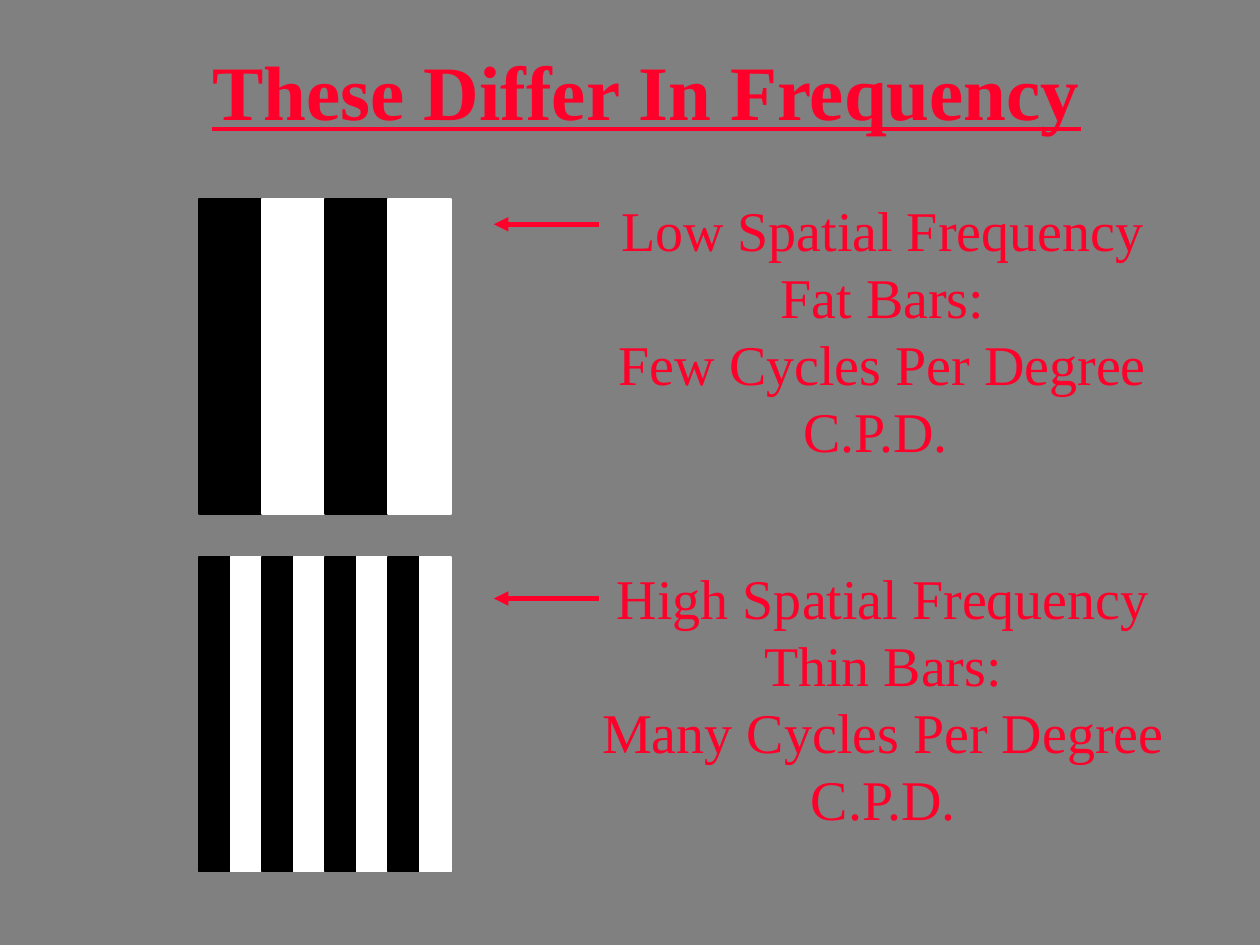
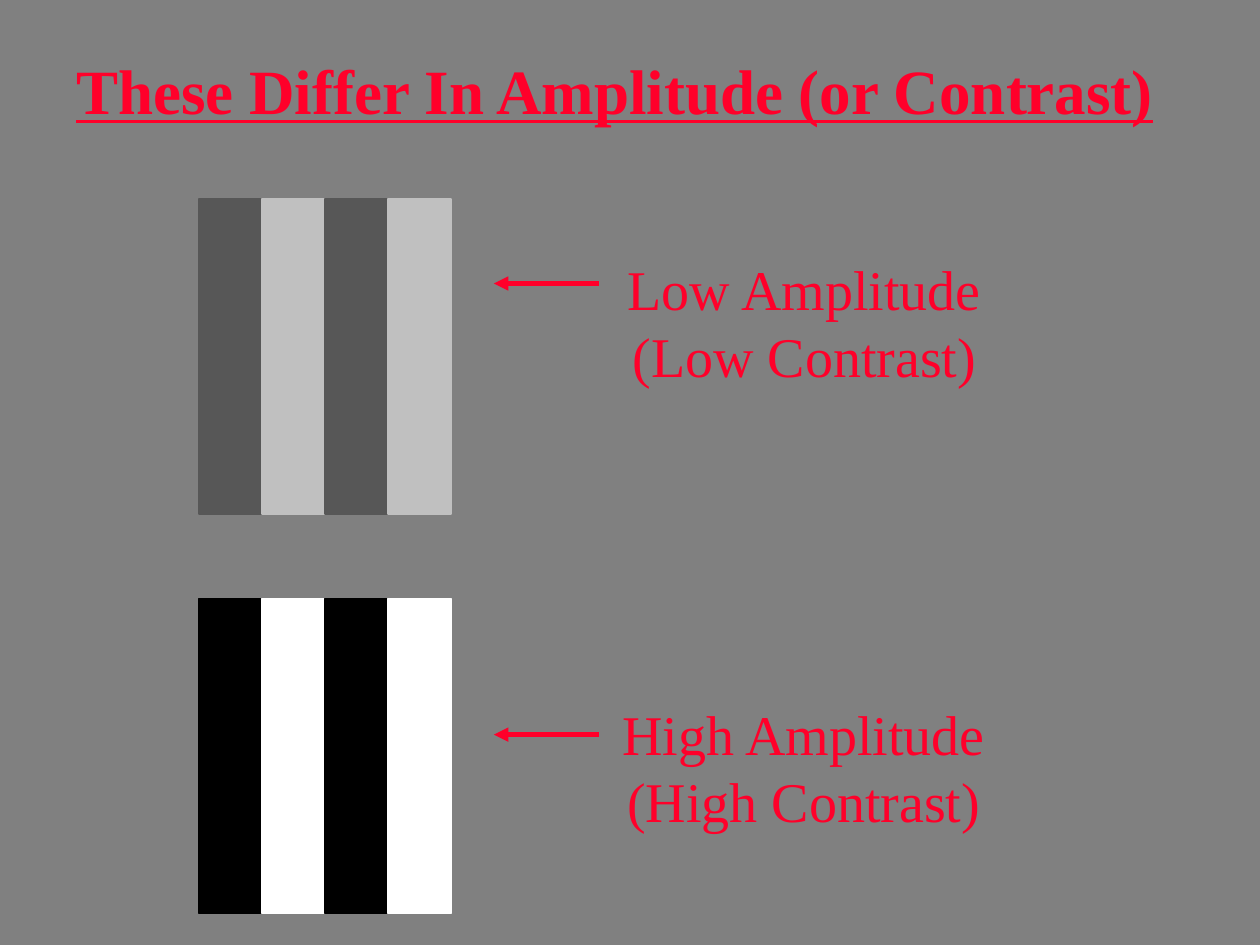
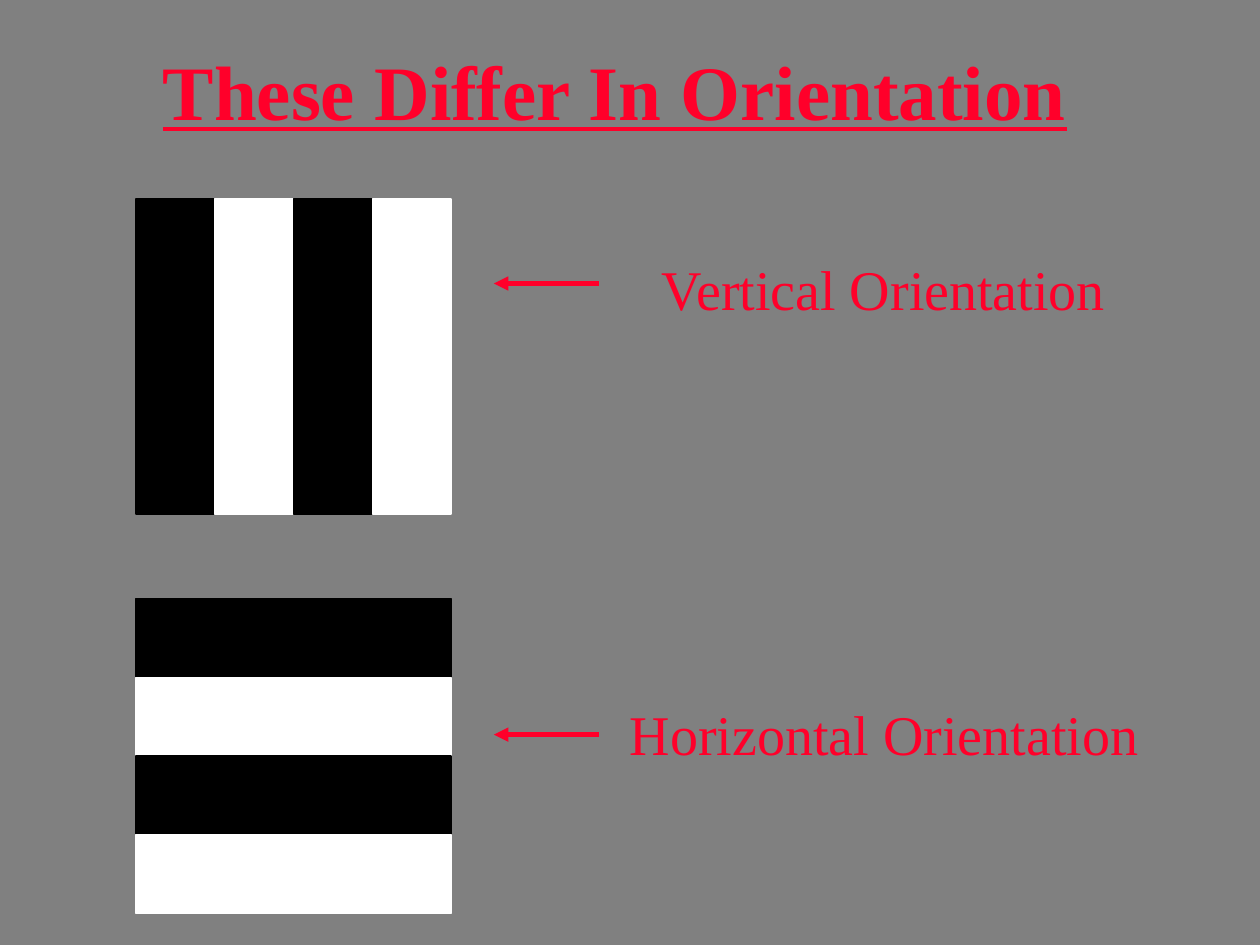
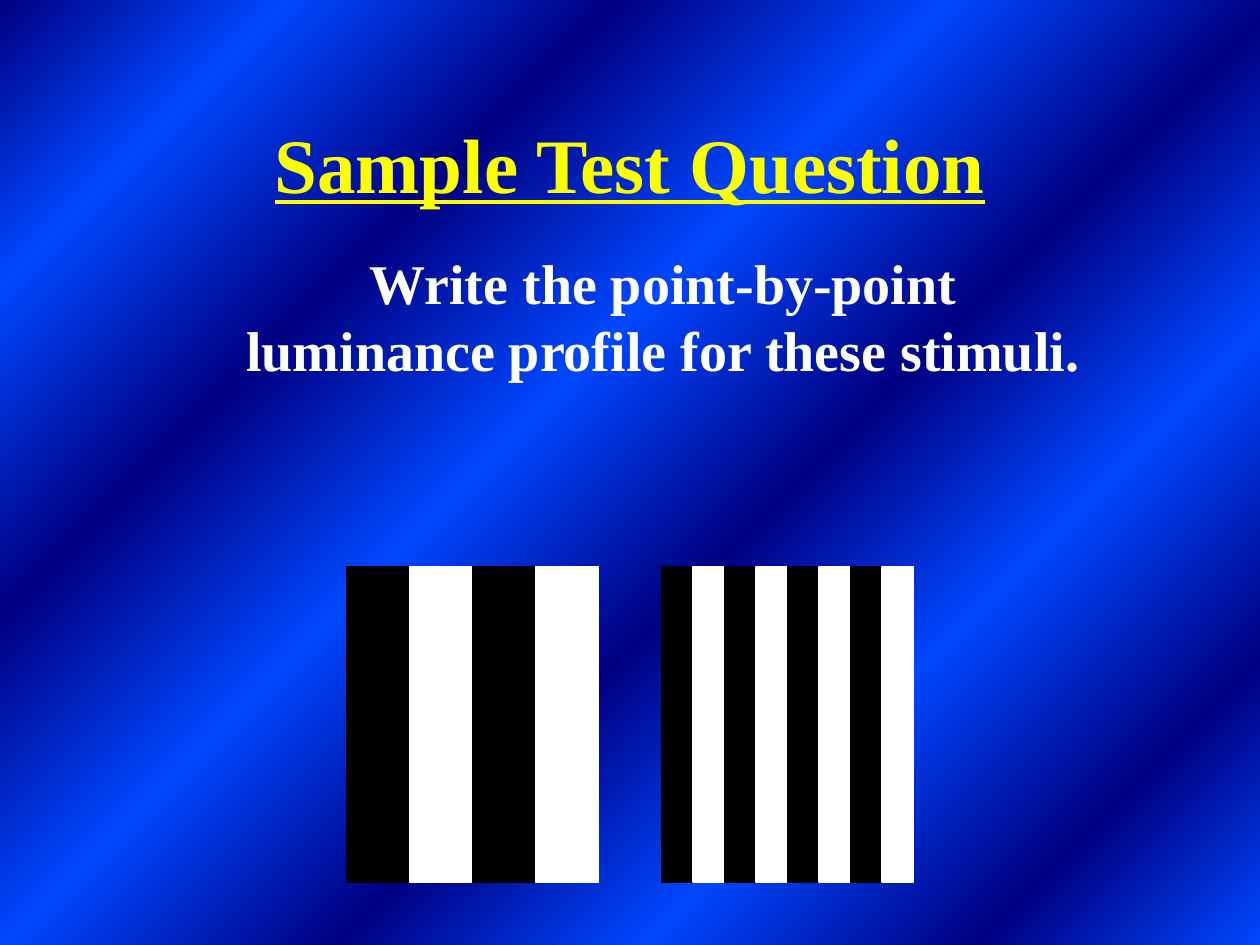
"""Build four slides on gratings that differ in frequency, amplitude and orientation."""
from lxml import etree
from pptx import Presentation
from pptx import util as u
from pptx.dml.color import RGBColor
from pptx.enum import shapes, text
from pptx.oxml import ns

GRAY = RGBColor(0x80, 0x80, 0x80)
RED = RGBColor(0xFF, 0x00, 0x2A)
YELLOW = RGBColor(0xFB, 0xFF, 0x00)
BLACK = RGBColor(0x00, 0x00, 0x00)
WHITE = RGBColor(0xFF, 0xFF, 0xFF)
DARK_GRAY = RGBColor(0x57, 0x57, 0x57)
LIGHT_GRAY = RGBColor(0xC0, 0xC0, 0xC0)
NAVY = RGBColor(0x00, 0x00, 0x82)
BLUE = RGBColor(0x00, 0x47, 0xFF)

STRONG = (BLACK, WHITE)
FAINT = (DARK_GRAY, LIGHT_GRAY)
GRADIENT_STOPS = (0, 13, 28, 43, 58, 72, 87, 100)
BAR_LENGTH = 2.5
ARROW_START, ARROW_END = 4.75, 3.92


def write_text(frame, content, frame_format, font_format):
    """Fill a text frame with centred, formatted paragraphs."""
    frame.text = content
    for name, value in frame_format.items():
        setattr(frame, name, value)
    for paragraph in frame.paragraphs:
        paragraph.alignment = text.PP_ALIGN.CENTER
        for run in paragraph.runs:
            run.font.color.rgb = font_format["color"]
            for name in ("size", "bold", "underline"):
                setattr(run.font, name, font_format[name])
            run.font.name = "Times New Roman"


def add_grating(slide, left, top, bar_width, bar_count, tones, horizontal=False):
    """Add a group of adjoining bars in alternating tones."""
    bars = slide.shapes.add_group_shape().shapes
    for index in range(bar_count):
        offset = index * bar_width
        box = ((left, top + offset, BAR_LENGTH, bar_width) if horizontal
               else (left + offset, top, bar_width, BAR_LENGTH))
        bar = bars.add_shape(shapes.MSO_SHAPE.RECTANGLE, *map(u.Inches, box))
        bar.shadow.inherit = False
        bar.fill.solid()
        bar.fill.fore_color.rgb = bar.line.color.rgb = tones[index % 2]
        bar.line.width = u.Pt(0.75)


TITLE_FRAME = {"vertical_anchor": text.MSO_ANCHOR.MIDDLE, "word_wrap": True,
               "auto_size": text.MSO_AUTO_SIZE.NONE}
LABEL_FRAME = {"word_wrap": False, "auto_size": text.MSO_AUTO_SIZE.SHAPE_TO_FIT_TEXT}

lessons = [
    {"title": "These Differ In Frequency", "title_box": (0.67, 0.17, 8.92, 1.08),
     "gratings": [(1.58, 1.58, 0.5, 4, STRONG), (1.58, 4.42, 0.25, 8, STRONG)],
     "labels": [
         ("Low Spatial Frequency\nFat Bars:\nFew Cycles Per Degree\nC.P.D. ",
          (4.81, 1.5, 4.39, 2.23)),
         ("High Spatial Frequency\nThin Bars:\nMany Cycles Per Degree\nC.P.D.",
          (4.68, 4.42, 4.66, 2.23))],
     "arrows": (1.78, 4.75)},
    {"title": "These Differ In Amplitude (or Contrast)", "title_size": 36,
     "title_box": (0.42, 0.17, 8.92, 1.08),
     "gratings": [(1.58, 1.58, 0.5, 4, FAINT), (1.58, 4.75, 0.5, 4, STRONG)],
     "labels": [("Low Amplitude\n(Low Contrast)", (4.87, 1.97, 3.03, 1.17)),
                ("High Amplitude\n(High Contrast)", (4.83, 5.5, 3.1, 1.17))],
     "arrows": (2.25, 5.83)},
    {"title": "These Differ In Orientation", "title_box": (0.42, 0.17, 8.92, 1.08),
     "gratings": [(1.08, 1.58, BAR_LENGTH / 4, 4, STRONG),
                  (1.08, 4.75, BAR_LENGTH / 4, 4, STRONG, True)],
     "labels": [("Vertical Orientation", (5.13, 1.97, 3.77, 0.63)),
                ("Horizontal Orientation", (4.9, 5.5, 4.24, 0.63))],
     "arrows": (2.25, 5.83)},
    {"title": "Sample Test Question", "title_box": (0.75, 0.67, 8.5, 1.25),
     "question": True,
     "gratings": [(2.75, 4.5, 0.5, 4, STRONG), (5.25, 4.5, 0.25, 8, STRONG)],
     "labels": [("Write the point-by-point\nluminance profile for these stimuli.",
                 (1.85, 1.92, 6.83, 1.17))],
     "arrows": ()},
]

deck = Presentation()
deck.slide_width, deck.slide_height = u.Inches(10), u.Inches(7.5)

for lesson in lessons:
    slide = deck.slides.add_slide(deck.slide_layouts[5])
    is_question = lesson.get("question", False)
    backdrop = slide.background.fill
    if is_question:
        backdrop.gradient()
        backdrop.gradient_angle = 315
        stops = slide.element.find(".//" + ns.qn("a:gsLst"))
        for stop in list(stops):
            stops.remove(stop)
        for index, percent in enumerate(GRADIENT_STOPS):
            stop = etree.SubElement(stops, ns.qn("a:gs"), pos=str(percent * 1000))
            etree.SubElement(stop, ns.qn("a:srgbClr"), val=str((NAVY, BLUE)[index % 2]))
    else:
        backdrop.solid()
        backdrop.fore_color.rgb = GRAY

    heading = slide.shapes.title
    for side, inches in zip(("left", "top", "width", "height"), lesson["title_box"]):
        setattr(heading, side, u.Inches(inches))
    write_text(heading.text_frame, lesson["title"], TITLE_FRAME,
               {"size": u.Pt(lesson.get("title_size", 44)), "bold": True,
                "underline": True, "color": YELLOW if is_question else RED})

    for grating in lesson["gratings"]:
        add_grating(slide, *grating)

    for wording, box in lesson["labels"]:
        label = slide.shapes.add_textbox(*map(u.Inches, box))
        write_text(label.text_frame, wording, LABEL_FRAME,
                   {"size": u.Pt(32), "bold": is_question, "underline": False,
                    "color": WHITE if is_question else RED})

    for height in lesson["arrows"]:
        arrow = slide.shapes.add_connector(
            shapes.MSO_CONNECTOR.STRAIGHT, u.Inches(ARROW_START), u.Inches(height),
            u.Inches(ARROW_END), u.Inches(height))
        arrow.line.color.rgb = RED
        arrow.line.width = u.Pt(2.75)
        etree.SubElement(arrow.line._get_or_add_ln(), ns.qn("a:tailEnd"), type="triangle")
        etree.SubElement(arrow.element.spPr, ns.qn("a:effectLst"))

deck.save("out.pptx")
